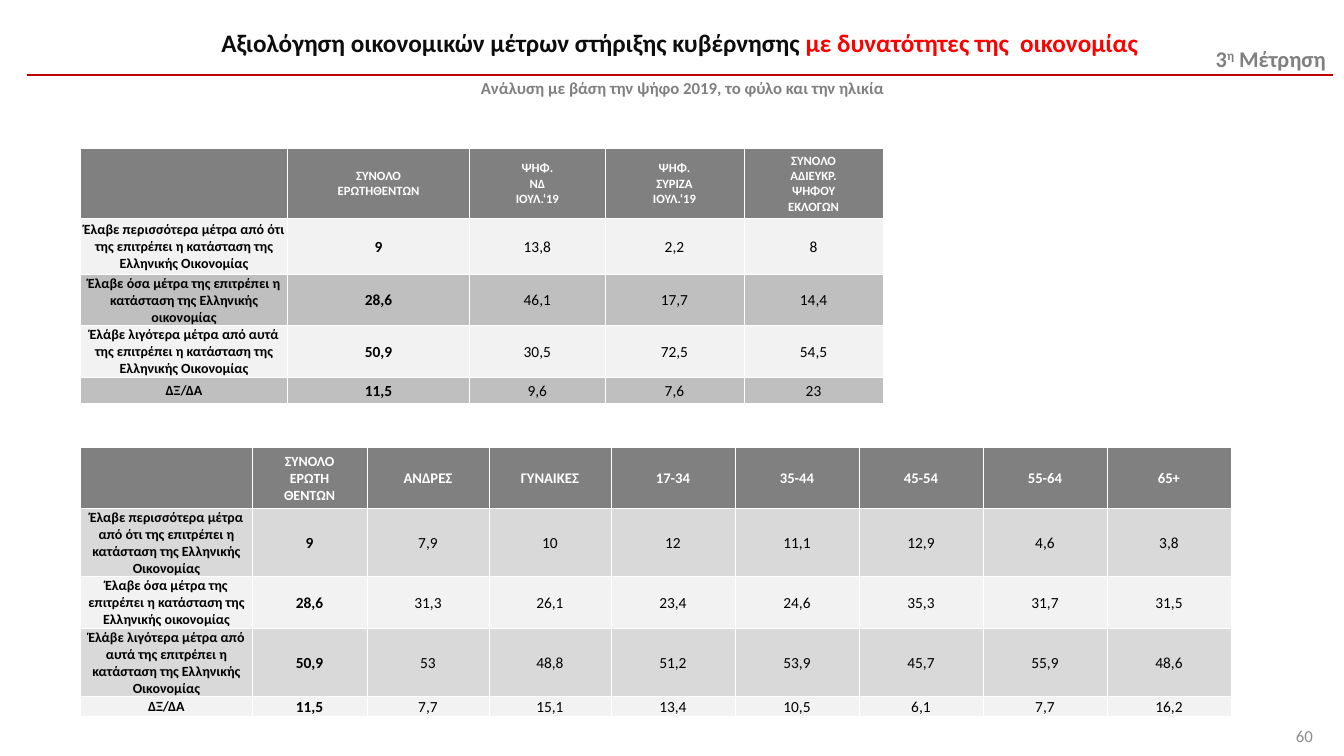
from lxml import etree
from pptx import Presentation
from pptx.dml.color import RGBColor
from pptx.enum.shapes import MSO_CONNECTOR, MSO_SHAPE
from pptx.enum.text import MSO_ANCHOR, PP_ALIGN
from pptx.oxml.ns import qn
from pptx.util import Inches, Pt

CENTER, RIGHT = PP_ALIGN.CENTER, PP_ALIGN.RIGHT
MIDDLE = MSO_ANCHOR.MIDDLE
FONT = "Calibri"
WHITE, BLACK, GRAY, LIGHT = "FFFFFF", "000000", "808080", "F2F2F2"

TITLE = [("Αξιολόγηση οικονομικών μέτρων στήριξης κυβέρνησης ", "0D0D0D"),
         ("με δυνατότητες της  οικονομίας ", "FF0000")]
SUBTITLE = "Ανάλυση με βάση την ψήφο 2019, το φύλο και την ηλικία"
WAVE = ["3", "η", " Μέτρηση"]
PAGE = "60"

ANSWERS = [
    "Έλαβε περισσότερα μέτρα από ότι της επιτρέπει η κατάσταση της Ελληνικής Οικονομίας",
    "Έλαβε όσα μέτρα της επιτρέπει η κατάσταση της Ελληνικής οικονομίας",
    "Έλάβε λιγότερα μέτρα από αυτά της επιτρέπει η κατάσταση της Ελληνικής Οικονομίας",
    "ΔΞ/ΔΑ",
]

VOTE = {
    "top": 1.47,
    "cols": [2.05, 1.81, 1.34, 1.38, 1.38],
    "rows": [0.7, 0.55, 0.51, 0.51, 0.26],
    "bands": [LIGHT, "BFBFBF"],
    "header_sizes": [9] * 5,
    "header": ["", "ΣΥΝΟΛΟ\nΕΡΩΤΗΘΕΝΤΩΝ", "ΨΗΦ.\nΝΔ\nΙΟΥΛ.‘19",
               "ΨΗΦ.\nΣΥΡΙΖΑ\nΙΟΥΛ.‘19", "ΣΥΝΟΛΟ\nΑΔΙΕΥΚΡ.\nΨΗΦΟΥ\nΕΚΛΟΓΩΝ"],
    "values": [
        ["9", "13,8", "2,2", "8"],
        ["28,6", "46,1", "17,7", "14,4"],
        ["50,9", "30,5", "72,5", "54,5"],
        ["11,5", "9,6", "7,6", "23"],
    ],
}
SEX_AGE = {
    "top": 4.44,
    "cols": [1.7, 1.14, 1.21, 1.21] + [1.23] * 5,
    "rows": [0.6, 0.68, 0.51, 0.68, 0.19],
    "bands": ["D9D9D9", LIGHT],
    "header_sizes": [10, 10] + [10.5] * 7,
    "header": ["", "ΣΥΝΟΛΟ\nΕΡΩΤΗ\nΘΕΝΤΩΝ", "ΑΝΔΡΕΣ", "ΓΥΝΑΙΚΕΣ",
               "17-34", "35-44", "45-54", "55-64", "65+"],
    "values": [
        ["9", "7,9", "10", "12", "11,1", "12,9", "4,6", "3,8"],
        ["28,6", "31,3", "26,1", "23,4", "24,6", "35,3", "31,7", "31,5"],
        ["50,9", "53", "48,8", "51,2", "53,9", "45,7", "55,9", "48,6"],
        ["11,5", "7,7", "15,1", "13,4", "10,5", "6,1", "7,7", "16,2"],
    ],
}


def rgb(color):
    return RGBColor.from_string(color)


def style(font, size, color, bold=False):
    font.name, font.size, font.bold = FONT, Pt(size), bold
    font.color.rgb = rgb(color)


def add_run(p, text, size, color, bold=True):
    r = p.add_run()
    r.text = text
    style(r.font, size, color, bold)
    return r


def add_borders(cell):
    """Thin white lines on all four sides; call before setting the fill."""
    tc_pr = cell._tc.get_or_add_tcPr()
    for side in ("a:lnL", "a:lnR", "a:lnT", "a:lnB"):
        ln = etree.SubElement(tc_pr, qn(side), w=str(Pt(0.5)))
        fill = etree.SubElement(ln, qn("a:solidFill"))
        etree.SubElement(fill, qn("a:srgbClr"), val=WHITE)


def fill_cell(cell, text, fill, size, color, bold):
    add_borders(cell)
    cell.fill.solid()
    cell.fill.fore_color.rgb = rgb(fill)
    cell.vertical_anchor = MIDDLE
    cell.margin_left = cell.margin_right = cell.margin_top = Inches(0.01)
    cell.margin_bottom = 0
    cell.text_frame.text = text
    for p in cell.text_frame.paragraphs:
        p.alignment = CENTER
        style(p.font, size, color, bold)
        for r in p.runs:
            style(r.font, size, color, bold)


def add_results(slide, data):
    cols, rows = data["cols"], data["rows"]
    table = slide.shapes.add_table(
        len(rows), len(cols), Inches(0.8), Inches(data["top"]),
        Inches(sum(cols)), Inches(sum(rows))).table
    for col, width in zip(table.columns, cols):
        col.width = Inches(width)
    for row, height in zip(table.rows, rows):
        row.height = Inches(height)
    for j, (text, size) in enumerate(zip(data["header"], data["header_sizes"])):
        fill_cell(table.cell(0, j), text, GRAY, size, WHITE, True)
    for i, (answer, values) in enumerate(zip(ANSWERS, data["values"])):
        for j, text in enumerate([answer] + values):
            fill_cell(table.cell(i + 1, j), text, data["bands"][i % 2],
                      10 if j == 0 else 11, BLACK, j < 2)


def add_heading(slide):
    line = slide.shapes.add_connector(
        MSO_CONNECTOR.STRAIGHT, Inches(0.27), Inches(0.74), Inches(13.22), Inches(0.74))
    line.line.color.rgb = rgb("C00000")
    line.line.width = Pt(1.5)
    etree.SubElement(line._element.spPr, qn("a:effectLst"))

    wave = slide.shapes.add_textbox(Inches(11.96), Inches(0.4), Inches(1.37), Inches(0.37))
    wave.text_frame.word_wrap = False
    runs = [add_run(wave.text_frame.paragraphs[0], text, 16, GRAY) for text in WAVE]
    runs[1].font._element.set("baseline", "30000")

    title = slide.shapes.add_textbox(0, Inches(0.22), Inches(13.54), Inches(1.25))
    tf = title.text_frame
    tf.word_wrap = True
    p = tf.paragraphs[0]
    p.alignment = CENTER
    for text, color in TITLE:
        add_run(p, text, 18, color)
    p = tf.add_paragraph()
    p.alignment = CENTER
    p.space_before = Pt(12)
    p.line_spacing = 1.2
    add_run(p, SUBTITLE, 12, GRAY)


def add_page_number(slide):
    sp = slide.shapes.add_shape(
        MSO_SHAPE.RECTANGLE, Inches(12.48), Inches(7.1), Inches(0.64), Inches(0.4))
    sp.shadow.inherit = False
    sp.fill.solid()
    sp.fill.fore_color.rgb = rgb(WHITE)
    sp.line.fill.background()
    sp.text_frame.vertical_anchor = MIDDLE
    p = sp.text_frame.paragraphs[0]
    p.alignment = RIGHT
    add_run(p, PAGE, 12, "8C8C8C", False)


def main():
    prs = Presentation()
    prs.slide_width, prs.slide_height = Inches(13.33), Inches(7.5)
    slide = prs.slides.add_slide(prs.slide_layouts[6])
    add_heading(slide)
    add_page_number(slide)
    for data in (SEX_AGE, VOTE):
        add_results(slide, data)
    prs.save("out.pptx")


if __name__ == "__main__":
    main()
